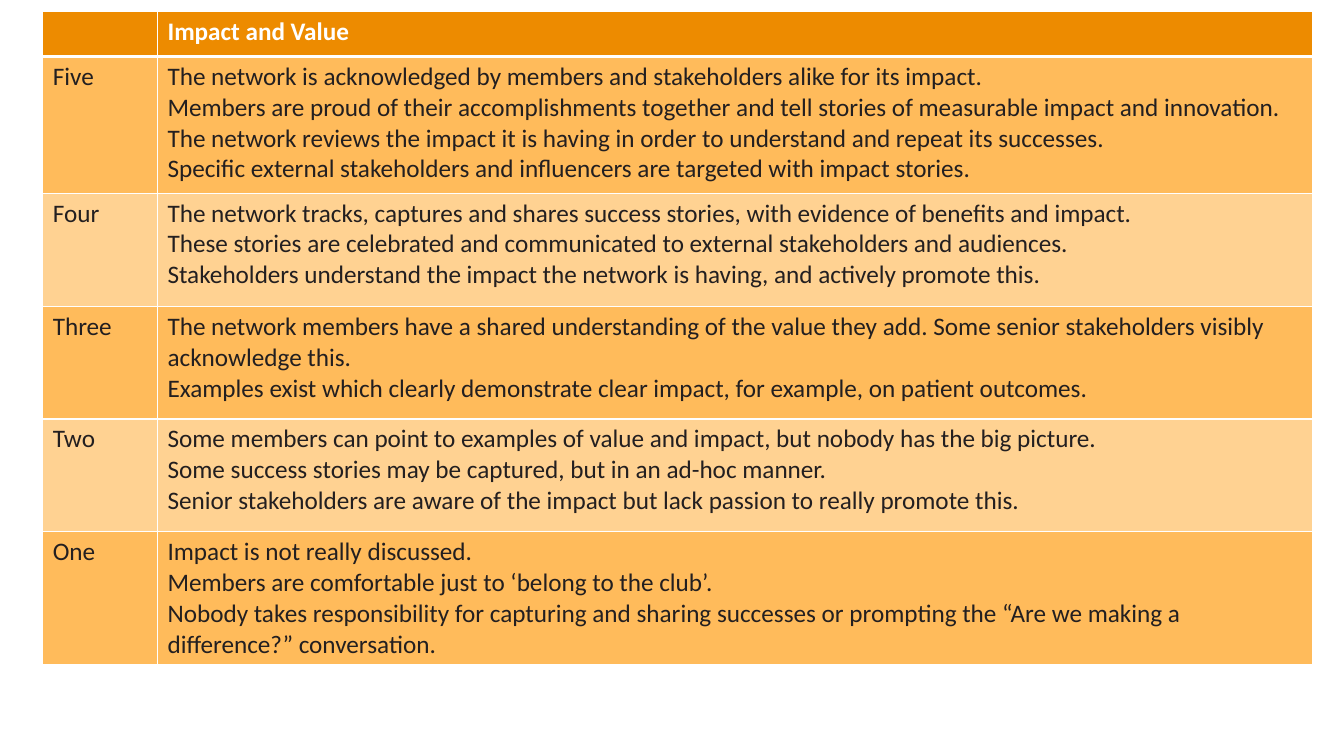
from dataclasses import dataclass

from lxml.etree import SubElement as Sub
from pptx import Presentation as Deck
from pptx.dml.color import RGBColor as Rgb
from pptx.oxml.ns import qn
from pptx.util import Pt


@dataclass(frozen=True)
class Theme:
    font: str = "Calibri"
    size: float = 18
    head: str = "ED8B00"
    bands: tuple = ("FFBB5B", "FFD292")
    text: str = "231F20"
    white: str = "FFFFFF"
    thin: float = 1
    thick: float = 3


THEME = Theme()

TITLE = "Impact and Value"
LEVELS = [
    ("Five", [
        "The network is acknowledged by members and stakeholders alike for its impact.",
        "Members are proud of their accomplishments together and tell stories of measurable impact and innovation.",
        "The network reviews the impact it is having in order to understand and repeat its successes.",
        "Specific external stakeholders and influencers are targeted with impact stories.",
    ]),
    ("Four", [
        "The network tracks, captures and shares success stories, with evidence of benefits and impact.",
        "These stories are celebrated and communicated to external stakeholders and audiences.",
        "Stakeholders understand the impact the network is having, and actively promote this.",
    ]),
    ("Three", [
        "The network members have a shared understanding of the value they add. "
        "Some senior stakeholders visibly acknowledge this.",
        "Examples exist which clearly demonstrate clear impact, for example, on patient outcomes.",
    ]),
    ("Two", [
        "Some members can point to examples of value and impact, but nobody has the big picture.",
        "Some success stories may be captured, but in an ad-hoc manner.",
        "Senior stakeholders are aware of the impact but lack passion to really promote this.",
    ]),
    ("One", [
        "Impact is not really discussed.",
        "Members are comfortable just to ‘belong to the club’.",
        "Nobody takes responsibility for capturing and sharing successes or prompting "
        "the “Are we making a difference?” conversation.",
    ]),
]

LEFT, TOP = 30.5, 8.2
WIDTHS = [82, 825]
HEIGHTS = [32.2, 97.6, 81, 80.3, 80.6, 95]


def add_text(cell, lines, color, bold):
    look = {"name": THEME.font, "size": Pt(THEME.size), "bold": bold}
    frame = cell.text_frame
    for i, line in enumerate(lines):
        para = frame.add_paragraph() if i else frame.paragraphs[0]
        run = para.add_run()
        run.text = line
        for key, value in look.items():
            setattr(run.font, key, value)
        run.font.color.rgb = Rgb.from_string(color)


def add_edges(cell, top, base):
    # Borders come before the fill in the cell's properties
    props = cell._tc.get_or_add_tcPr()
    edges = {"lnL": THEME.thin, "lnR": THEME.thin, "lnT": top, "lnB": base}
    for tag, width in edges.items():
        line = Sub(props, qn(f"a:{tag}"), w=str(Pt(width)))
        fill = Sub(line, qn("a:solidFill"))
        Sub(fill, qn("a:srgbClr"), val=THEME.white)


def add_row(table, row, texts, fill, color, bold=False):
    top = THEME.thick if row == 1 else THEME.thin
    base = THEME.thick if row == 0 else THEME.thin
    for col, lines in enumerate(texts):
        cell = table.cell(row, col)
        add_edges(cell, top, base)
        cell.fill.solid()
        cell.fill.fore_color.rgb = Rgb.from_string(fill)
        add_text(cell, lines, color, bold)


def add_grid(slide):
    frame = slide.shapes.add_table(
        len(HEIGHTS), len(WIDTHS), Pt(LEFT), Pt(TOP),
        Pt(sum(WIDTHS)), Pt(sum(HEIGHTS)))
    table = frame.table
    for col, width in zip(table.columns, WIDTHS):
        col.width = Pt(width)
    for row, height in zip(table.rows, HEIGHTS):
        row.height = Pt(height)
    return table


def main():
    deck = Deck()
    deck.slide_width, deck.slide_height = Pt(960), Pt(540)
    slide = deck.slides.add_slide(deck.slide_layouts[6])
    table = add_grid(slide)

    # Heading row
    add_row(table, 0, [[], [TITLE]], THEME.head, THEME.white, bold=True)

    # Maturity levels in alternating bands
    for row, (level, lines) in enumerate(LEVELS, 1):
        fill = THEME.bands[(row - 1) % len(THEME.bands)]
        add_row(table, row, [[level], lines], fill, THEME.text)

    deck.save("out.pptx")


if __name__ == "__main__":
    main()
